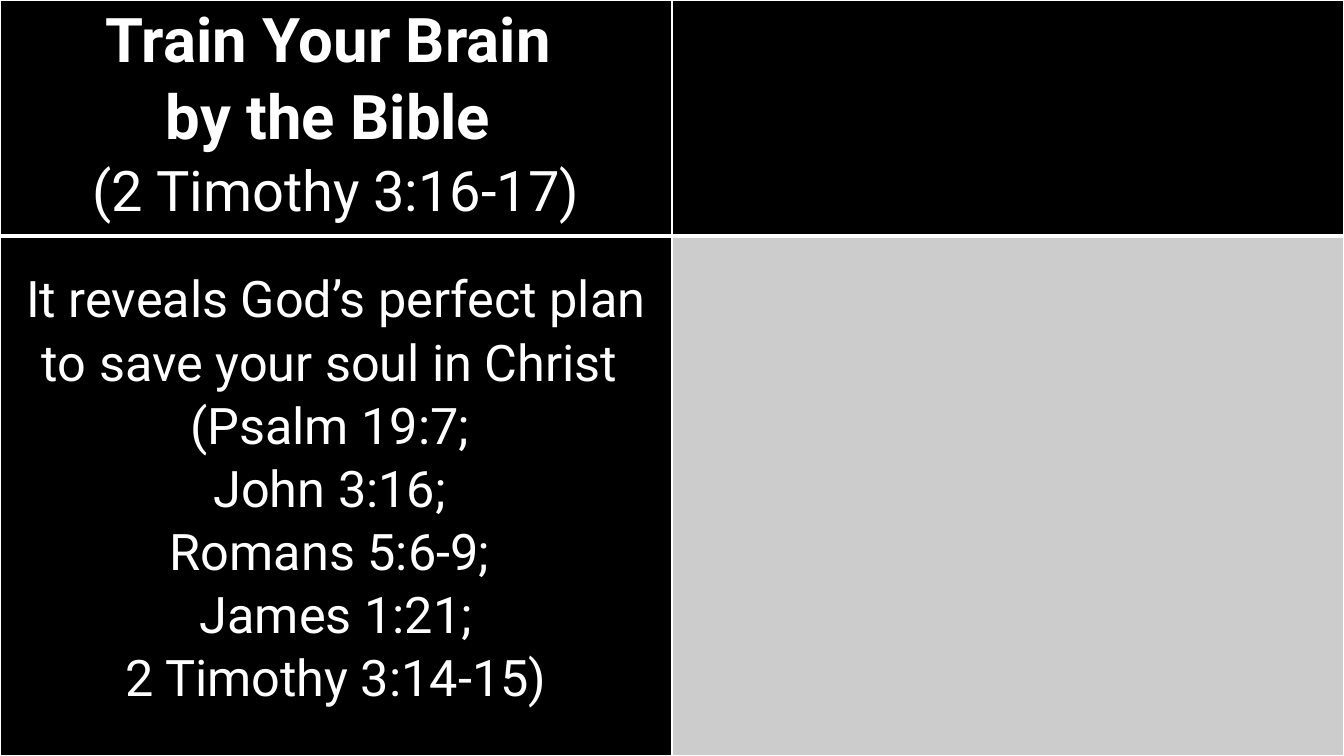
from dataclasses import dataclass

from lxml.etree import SubElement
from pptx import Presentation
from pptx.dml.color import RGBColor
from pptx.enum.text import PP_ALIGN
from pptx.oxml.ns import qn
from pptx.table import _Cell
from pptx.util import Inches, Pt

COLORS = {"black": "000000", "white": "FFFFFF", "gray": "CCCCCC"}
FONT = "Roboto"
SLIDE_WIDTH, SLIDE_HEIGHT = 13.33, 7.5
ROW_HEIGHTS = (2.34, 5.16)
RULE_WIDTH, HEADER_RULE_WIDTH = 1, 3


@dataclass(frozen=True)
class Line:
    text: str
    size: int = 36
    bold: bool = False


@dataclass(frozen=True)
class Panel:
    row: int
    column: int
    fill: str = "black"
    lines: tuple[Line, ...] = ()
    top_margin: float = 0


TITLE = (
    Line("Train Your Brain ", 44, True),
    Line("by the Bible ", 44, True),
    Line("(2 Timothy 3:16-17)", 40),
)
LESSON = (
    Line("It reveals God’s perfect plan to save your soul in Christ "),
    Line("(Psalm 19:7; "),
    Line("John 3:16; "),
    Line("Romans 5:6-9; "),
    Line("James 1:21;"),
    Line("2 Timothy 3:14-15)"),
)
PANELS = (
    Panel(0, 0, lines=TITLE),
    Panel(0, 1),
    Panel(1, 0, lines=LESSON, top_margin=0.31),
    Panel(1, 1, fill="gray"),
)


def draw_borders(cell: _Cell, row: int) -> None:
    top, bottom = ((RULE_WIDTH, HEADER_RULE_WIDTH) if row == 0
                   else (HEADER_RULE_WIDTH, RULE_WIDTH))
    widths = {"lnL": RULE_WIDTH, "lnR": RULE_WIDTH, "lnT": top, "lnB": bottom}
    properties = cell._tc.get_or_add_tcPr()
    for side, width in widths.items():
        border = SubElement(properties, qn(f"a:{side}"), w=str(Pt(width)))
        solid = SubElement(border, qn("a:solidFill"))
        SubElement(solid, qn("a:srgbClr"), val=COLORS["white"])


def write_lines(cell: _Cell, lines: tuple[Line, ...]) -> None:
    frame = cell.text_frame
    for index, line in enumerate(lines):
        paragraph = frame.add_paragraph() if index else frame.paragraphs[0]
        paragraph.alignment = PP_ALIGN.CENTER
        paragraph.line_spacing = 1.07
        run = paragraph.add_run()
        run.text = line.text
        formats = {"name": FONT, "size": Pt(line.size), "bold": line.bold}
        for attribute, value in formats.items():
            setattr(run.font, attribute, value)
        run.font.color.rgb = RGBColor.from_string(COLORS["white"])


def draw_panel(cell: _Cell, panel: Panel) -> None:
    margins = {
        "margin_left": Inches(0.07),
        "margin_right": Inches(0.07),
        "margin_top": Inches(panel.top_margin),
        "margin_bottom": Inches(0),
    }
    for attribute, value in margins.items():
        setattr(cell, attribute, value)
    draw_borders(cell, panel.row)
    cell.fill.solid()
    cell.fill.fore_color.rgb = RGBColor.from_string(COLORS[panel.fill])
    write_lines(cell, panel.lines)


def main() -> None:
    presentation = Presentation()
    presentation.slide_width = Inches(SLIDE_WIDTH)
    presentation.slide_height = Inches(SLIDE_HEIGHT)
    slide = presentation.slides.add_slide(presentation.slide_layouts[6])

    # Background
    slide.background.fill.solid()
    slide.background.fill.fore_color.rgb = RGBColor.from_string(COLORS["black"])

    # Full-slide grid: title row above, lesson row below
    grid = slide.shapes.add_table(
        2, 2, Inches(0), Inches(0), Inches(SLIDE_WIDTH), Inches(SLIDE_HEIGHT)
    ).table
    grid.first_row = False
    grid.horz_banding = False
    for row, height in zip(grid.rows, ROW_HEIGHTS):
        row.height = Inches(height)
    for panel in PANELS:
        draw_panel(grid.cell(panel.row, panel.column), panel)

    presentation.save("out.pptx")


if __name__ == "__main__":
    main()
